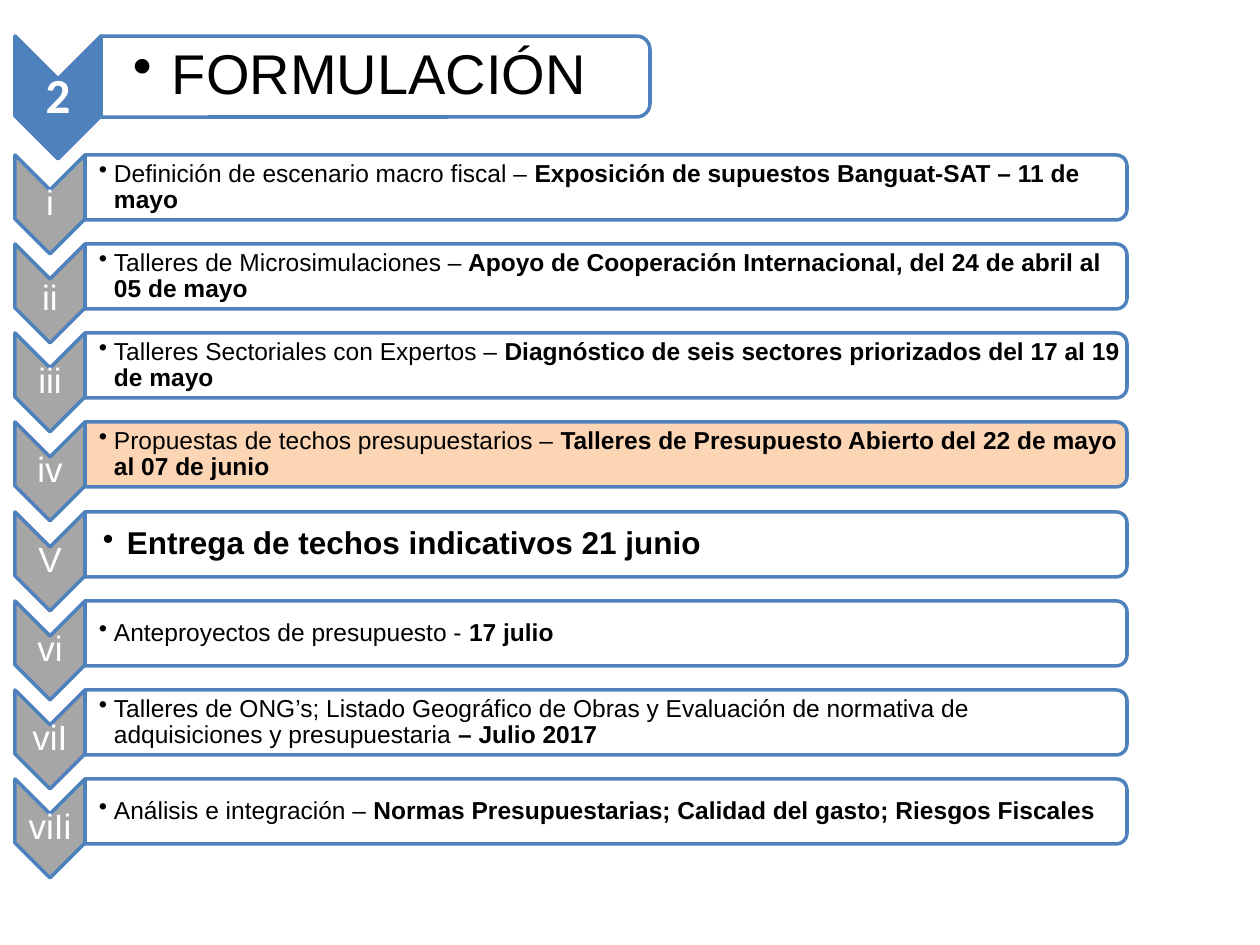
from dataclasses import dataclass

from lxml import etree
from pptx import Presentation
from pptx.dml.color import RGBColor
from pptx.enum.shapes import MSO_SHAPE
from pptx.enum.text import MSO_ANCHOR, PP_ALIGN
from pptx.oxml.ns import qn
from pptx.shapes.autoshape import Shape
from pptx.shapes.shapetree import GroupShapes
from pptx.text.text import _Paragraph as Paragraph
from pptx.util import Emu, Pt

CHEVRON = MSO_SHAPE.CHEVRON
ROUNDED_BAR = MSO_SHAPE.ROUND_2_SAME_RECTANGLE
TOP, MIDDLE = MSO_ANCHOR.TOP, MSO_ANCHOR.MIDDLE
CENTER, LEFT = PP_ALIGN.CENTER, PP_ALIGN.LEFT

BLUE = RGBColor(0x4F, 0x81, 0xBD)
GREY = RGBColor(0xA6, 0xA6, 0xA6)
PEACH = RGBColor(0xFC, 0xD5, 0xB5)
WHITE = RGBColor(0xFF, 0xFF, 0xFF)
BLACK = RGBColor(0, 0, 0)

PIXELS_PER_INCH = 126
SLIDE_WIDTH, SLIDE_HEIGHT = 1260, 945
LEFT_EDGE = 15
FIRST_STEP_TOP, LAST_STEP_TOP = 155, 779


@dataclass(frozen=True)
class RowStyle:
    chevron_width: int
    chevron_height: int
    chevron_color: RGBColor
    bar_width: int
    bar_height: int
    label_font: dict
    margin: int


@dataclass(frozen=True)
class Row:
    label: str
    plain: str
    bold: str = ""
    size: int = 14
    inset: int = 14
    indent: int = 15
    bar_color: RGBColor = WHITE
    opacity: int = 100
    label_anchor: MSO_ANCHOR = MIDDLE


TITLE_STYLE = RowStyle(86, 123, BLUE, 549, 81,
                       {"name": "Calibri", "size": Pt(28), "bold": True}, 3)
STEP_STYLE = RowStyle(70, 99, GREY, 1042, 65,
                      {"name": "Arial", "size": Pt(20)}, 1)

TITLE = Row("2", "FORMULACIÓN", size=32, inset=32, indent=39, opacity=90)
STEPS = [
    Row("i", "Definición de escenario macro fiscal – ",
        "Exposición de supuestos Banguat-SAT – 11 de mayo"),
    Row("ii", "Talleres de Microsimulaciones –",
        " Apoyo de Cooperación Internacional, del 24 de abril al 05 de mayo",
        label_anchor=TOP),
    Row("iii", "Talleres Sectoriales con Expertos – ",
        "Diagnóstico de seis sectores priorizados del 17 al 19 de mayo"),
    Row("iv", "Propuestas de techos presupuestarios – ",
        "Talleres de Presupuesto Abierto del 22 de mayo al 07 de junio",
        bar_color=PEACH),
    Row("V", "", "Entrega de techos indicativos 21 junio",
        size=18, inset=18, indent=24),
    Row("vi", "Anteproyectos de presupuesto - ", "17 julio", opacity=90),
    Row("viI", "Talleres de ONG’s; Listado Geográfico de Obras y Evaluación "
        "de normativa de adquisiciones y presupuestaria ", "– Julio 2017",
        opacity=90),
    Row("viIi", "Análisis e integración – ",
        "Normas Presupuestarias; Calidad del gasto; Riesgos Fiscales",
        opacity=90),
]


def px(length: float) -> Emu:
    return Emu(round(length * 914400 / PIXELS_PER_INCH))


def add_turned_shape(shapes: GroupShapes, kind: MSO_SHAPE, left: int, top: int,
                     width: int, height: int, color: RGBColor) -> Shape:
    """Add a shape turned by 90 degrees that covers the given box."""
    offset = (width - height) / 2
    shape = shapes.add_shape(kind, px(left + offset), px(top - offset),
                             px(height), px(width))
    shape.rotation = 90
    shape.shadow.inherit = False
    shape.fill.solid()
    shape.fill.fore_color.rgb = color
    shape.line.color.rgb = BLUE
    shape.line.width = Pt(2)
    return shape


def set_opacity(shape: Shape, percent: int) -> None:
    color = shape.fill._xPr.find(qn("a:solidFill"))[0]
    etree.SubElement(color, qn("a:alpha"), val=str(percent * 1000))


def add_text_box(shapes: GroupShapes, left: int, top: int, width: int, height: int,
                 inset: int, margin: int, anchor: MSO_ANCHOR,
                 alignment: PP_ALIGN) -> Paragraph:
    frame = shapes.add_textbox(px(left), px(top), px(width), px(height)).text_frame
    settings = {"word_wrap": True, "vertical_anchor": anchor,
                "margin_left": px(inset), "margin_right": px(margin),
                "margin_top": px(margin), "margin_bottom": px(margin)}
    for name, value in settings.items():
        setattr(frame, name, value)
    paragraph = frame.paragraphs[0]
    paragraph.alignment = alignment
    paragraph.line_spacing = 0.9
    return paragraph


def add_run(paragraph: Paragraph, text: str, color: RGBColor, font: dict) -> None:
    run = paragraph.add_run()
    run.text = text
    run.font.color.rgb = color
    for name, value in font.items():
        setattr(run.font, name, value)


def add_bullet(paragraph: Paragraph, indent: int) -> None:
    paragraph.level = 1
    properties = paragraph._p.get_or_add_pPr()
    properties.set("marL", str(px(indent)))
    properties.set("indent", str(-px(indent)))
    etree.SubElement(properties, qn("a:buChar"), char="•")


def draw_row(shapes: GroupShapes, row: Row, style: RowStyle, top: int) -> None:
    width, height = style.chevron_width, style.chevron_height
    add_turned_shape(shapes, CHEVRON, LEFT_EDGE, top, width, height,
                     style.chevron_color)
    label = add_text_box(shapes, LEFT_EDGE, top + width // 2, width, height - width,
                         style.margin, style.margin, row.label_anchor, CENTER)
    add_run(label, row.label, WHITE, style.label_font)

    bar_left = LEFT_EDGE + width
    bar = add_turned_shape(shapes, ROUNDED_BAR, bar_left, top, style.bar_width,
                           style.bar_height, row.bar_color)
    if row.opacity < 100:
        set_opacity(bar, row.opacity)
    body = add_text_box(shapes, bar_left, top + 4, style.bar_width - 4,
                        style.bar_height - 8, row.inset, style.margin, MIDDLE, LEFT)
    add_bullet(body, row.indent)
    for text, bold in ((row.plain, False), (row.bold, True)):
        if text:
            add_run(body, text, BLACK,
                    {"name": "Arial", "size": Pt(row.size), "bold": bold})


def main() -> None:
    presentation = Presentation()
    presentation.slide_width = px(SLIDE_WIDTH)
    presentation.slide_height = px(SLIDE_HEIGHT)
    slide = presentation.slides.add_slide(presentation.slide_layouts[6])

    title_group = slide.shapes.add_group_shape()
    draw_row(title_group.shapes, TITLE, TITLE_STYLE, 36)

    step_group = slide.shapes.add_group_shape()
    pitch = (LAST_STEP_TOP - FIRST_STEP_TOP) / (len(STEPS) - 1)
    for index, step in enumerate(STEPS):
        draw_row(step_group.shapes, step, STEP_STYLE,
                 round(FIRST_STEP_TOP + index * pitch))

    presentation.save("out.pptx")


if __name__ == "__main__":
    main()
